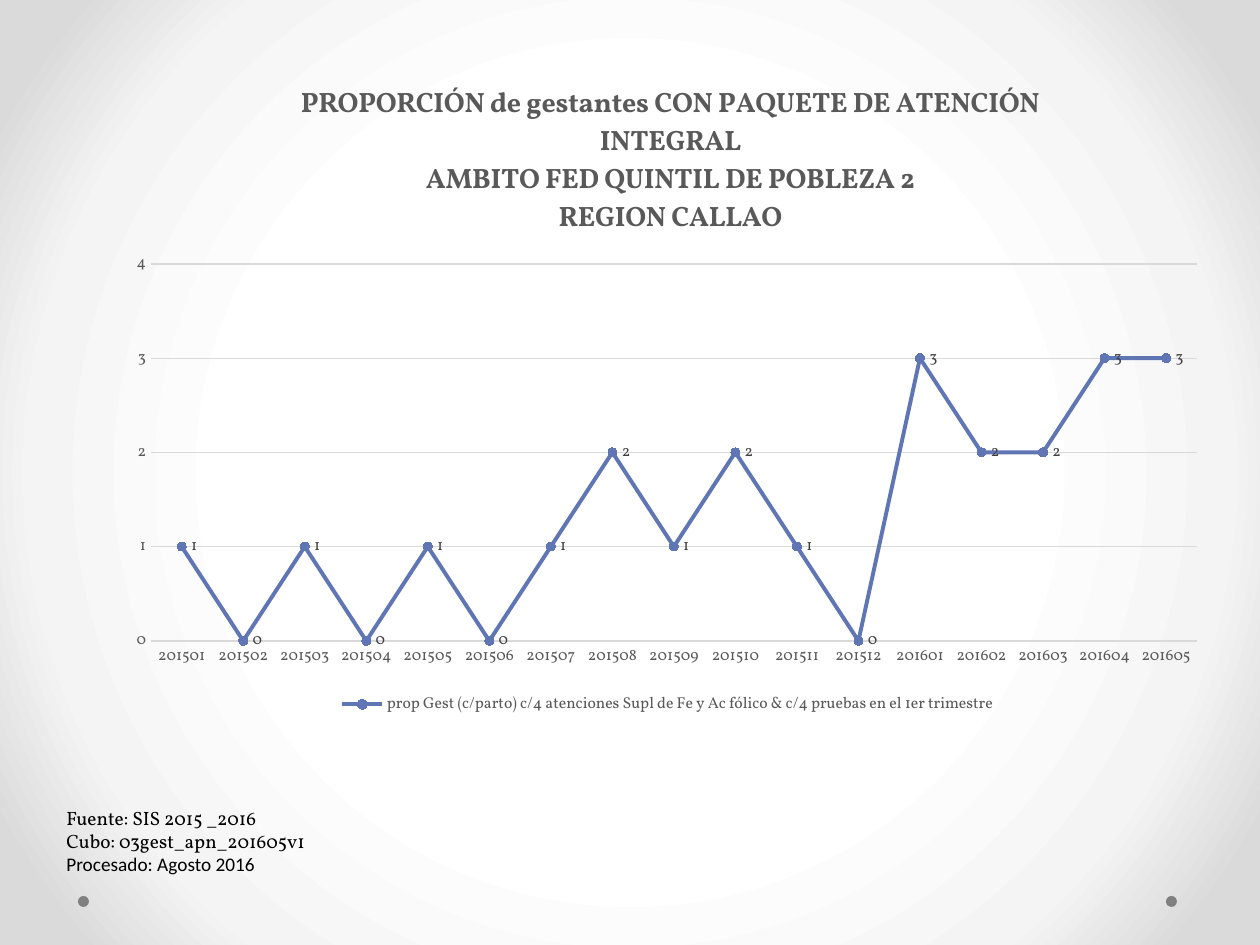
from lxml import etree
from pptx import Presentation
from pptx.chart.data import CategoryChartData
from pptx.dml.color import RGBColor
from pptx.enum.chart import (XL_CHART_TYPE, XL_LABEL_POSITION, XL_LEGEND_POSITION,
                             XL_MARKER_STYLE, XL_TICK_MARK)
from pptx.enum.shapes import MSO_SHAPE
from pptx.oxml import parse_xml
from pptx.oxml.ns import nsdecls, qn
from pptx.util import Pt

LINE_MARKERS = XL_CHART_TYPE.LINE_MARKERS
RIGHT = XL_LABEL_POSITION.RIGHT
BOTTOM = XL_LEGEND_POSITION.BOTTOM
CIRCLE = XL_MARKER_STYLE.CIRCLE
NO_TICK = XL_TICK_MARK.NONE
OVAL = MSO_SHAPE.OVAL

BLACK = RGBColor(0x00, 0x00, 0x00)
DARK = RGBColor(0x40, 0x40, 0x40)
GREY = RGBColor(0x59, 0x59, 0x59)
DOT = RGBColor(0x80, 0x80, 0x80)
RULE = RGBColor(0xD9, 0xD9, 0xD9)
BLUE = RGBColor(0x60, 0x76, 0xB4)

PX = 914400 // 126
SERIF = "Vollkorn"
CHART_X, CHART_Y, CHART_W, CHART_H = 115, 55, 1105, 665

prs = Presentation()
prs.slide_width, prs.slide_height = 1260 * PX, 945 * PX
s = prs.slides.add_slide(prs.slide_layouts[6])


def write(tf, lines, size, color, font=SERIF, bold=False, spacing=None):
    """Append one paragraph per line, using the empty first one."""
    for line in lines:
        p = tf.paragraphs[-1]
        if p.runs:
            p = tf.add_paragraph()
        p.line_spacing = spacing
        r = p.add_run()
        r.text = line
        r.font.size, r.font.bold, r.font.name = Pt(size), bold, font
        r.font.color.rgb = color


def manual_layout(parent, x, y, **extra):
    """Fix a chart part at slide px, with optional w and h."""
    layout = parent.find(qn("c:layout"))
    if layout is None:
        layout = etree.Element(qn("c:layout"))
        text = parent.find(qn("c:tx"))
        parent.insert(0 if text is None else 1, layout)
    manual = etree.SubElement(layout, qn("c:manualLayout"))
    values = {"xMode": "edge", "yMode": "edge",
              "x": round((x - CHART_X) / CHART_W, 4),
              "y": round((y - CHART_Y) / CHART_H, 4)}
    if extra:
        values = {"layoutTarget": "inner", **values,
                  "w": round(extra["w"] / CHART_W, 4),
                  "h": round(extra["h"] / CHART_H, 4)}
    for tag, value in values.items():
        etree.SubElement(manual, qn("c:" + tag)).set("val", str(value))


# Background: circular gradient from the centre
stops = "".join(
    f'<a:gs pos="{pos}000"><a:srgbClr val="{color}"/></a:gs>'
    for pos, color in [(50, "FFFFFF"), (76, "F4F4F4"), (92, "DADADA")])
s.background.fill.solid()
bg_pr = s.element.cSld.find(qn("p:bg")).find(qn("p:bgPr"))
bg_pr.replace(bg_pr[0], parse_xml(
    f'<a:gradFill {nsdecls("a")} rotWithShape="1"><a:gsLst>{stops}</a:gsLst>'
    '<a:path path="circle"><a:fillToRect l="50000" t="50000" r="50000" b="50000"/>'
    '</a:path></a:gradFill>'))

# Corner dots
for x in (1166, 78):
    sp = s.shapes.add_shape(OVAL, x * PX, 896 * PX, 11 * PX, 11 * PX)
    sp.shadow.inherit = False
    sp.fill.solid()
    sp.fill.fore_color.rgb = DOT
    sp.line.fill.background()

# Source note
tf = s.shapes.add_textbox(54 * PX, 800 * PX, 407 * PX, 83 * PX).text_frame
tf.word_wrap = True
write(tf, ["Fuente: SIS 2015 _2016", "Cubo: 03gest_apn_201605v1"],
      11, BLACK, spacing=Pt(13.2))
write(tf, ["Procesado: Agosto 2016"], 11, BLACK, font="Calibri", spacing=Pt(13.2))

# Chart
data = CategoryChartData(number_format="0")
data.categories = [f"{year}{month:02d}" for year, months in ((2015, 12), (2016, 5))
                   for month in range(1, months + 1)]
data.add_series("prop Gest (c/parto) c/4 atenciones Supl de Fe y Ac fólico"
                " & c/4 pruebas en el 1er trimestre",
                [1, 0, 1, 0, 1, 0, 1, 2, 1, 2, 1, 0, 3, 2, 2, 3, 3])
chart = s.shapes.add_chart(LINE_MARKERS, CHART_X * PX, CHART_Y * PX,
                           CHART_W * PX, CHART_H * PX, data).chart
chart.font.size, chart.font.name = Pt(10), SERIF
chart.font.color.rgb = BLACK

chart.has_title = True
write(chart.chart_title.text_frame,
      ["PROPORCIÓN de gestantes CON PAQUETE DE ATENCIÓN INTEGRAL",
       "AMBITO FED QUINTIL DE POBLEZA 2", "REGION CALLAO"], 16, GREY, bold=True)
chart.chart_title.include_in_layout = False
chart_xml = chart.plots[0]._element.getparent().getparent()
manual_layout(chart_xml.find(qn("c:title")), 297, 80)
manual_layout(chart_xml.find(qn("c:plotArea")), 151, 264, w=1046, h=377)

chart.has_legend = True
chart.legend.position = BOTTOM
chart.legend.include_in_layout = False

cat, val = chart.category_axis, chart.value_axis
for axis in (cat, val):
    axis.major_tick_mark = axis.minor_tick_mark = NO_TICK
cat.format.line.color.rgb = RULE
cat.format.line.width = Pt(0.75)
val.minimum_scale, val.maximum_scale, val.major_unit = 0, 4, 1
val.format.line.fill.background()
val.has_major_gridlines = True
val.major_gridlines.format.line.color.rgb = RULE
val.major_gridlines.format.line.width = Pt(0.75)
val.tick_labels.number_format = "0"
val.tick_labels.number_format_is_linked = False

plot = chart.plots[0]
plot.vary_by_categories = False
series = plot.series[0]
series.smooth = False
series.format.line.color.rgb = BLUE
series.format.line.width = Pt(2.25)
series.marker.style, series.marker.size = CIRCLE, 5
series.marker.format.fill.solid()
series.marker.format.fill.fore_color.rgb = BLUE
series.marker.format.line.color.rgb = BLUE

labels = series.data_labels
labels.show_value = True
labels.position = RIGHT
labels.number_format, labels.number_format_is_linked = "0", False

for font, color in ((cat.tick_labels.font, GREY), (val.tick_labels.font, GREY),
                    (chart.legend.font, GREY), (labels.font, DARK)):
    font.size, font.name = Pt(9), SERIF
    font.color.rgb = color

prs.save("out.pptx")
